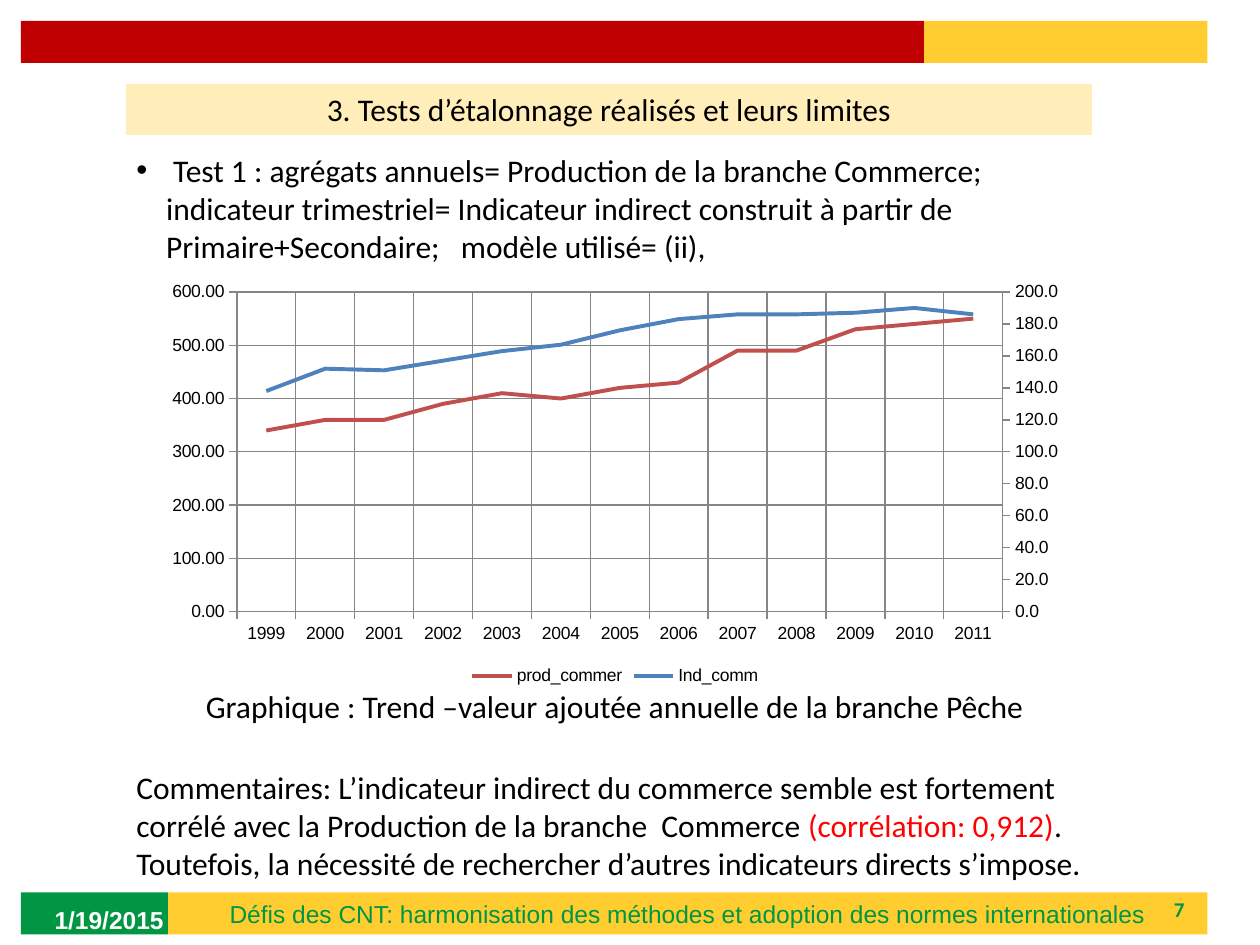
from copy import deepcopy

from lxml import etree
from pptx import Presentation
from pptx.chart.data import CategoryChartData
from pptx.dml.color import RGBColor
from pptx.enum.chart import XL_CHART_TYPE, XL_LEGEND_POSITION, XL_TICK_MARK
from pptx.enum.shapes import MSO_SHAPE
from pptx.enum.text import MSO_ANCHOR, MSO_AUTO_SIZE, PP_ALIGN
from pptx.oxml.ns import qn
from pptx.util import Cm, Pt

RECTANGLE = MSO_SHAPE.RECTANGLE
LINE_CHART = XL_CHART_TYPE.LINE
LEGEND_BOTTOM = XL_LEGEND_POSITION.BOTTOM
TICK_OUTSIDE = XL_TICK_MARK.OUTSIDE
TOP, MIDDLE = MSO_ANCHOR.TOP, MSO_ANCHOR.MIDDLE
NO_AUTOFIT = MSO_AUTO_SIZE.NONE
LEFT, CENTER, RIGHT = PP_ALIGN.LEFT, PP_ALIGN.CENTER, PP_ALIGN.RIGHT

BLACK = RGBColor(0x00, 0x00, 0x00)
WHITE = RGBColor(0xFF, 0xFF, 0xFF)
GREEN = RGBColor(0x00, 0x96, 0x44)
YELLOW = RGBColor(0xFF, 0xCD, 0x2F)
CREAM = RGBColor(0xFF, 0xEE, 0xB9)
DARK_RED = RGBColor(0xC0, 0x00, 0x00)
RED = RGBColor(0xFF, 0x00, 0x00)
GRID_GREY = RGBColor(0x86, 0x86, 0x86)
SERIES_COLORS = [RGBColor(0xC0, 0x50, 0x4D), RGBColor(0x4F, 0x81, 0xBD)]


def add_bar(left, top, width, height, color):
    bar = slide.shapes.add_shape(RECTANGLE, Cm(left), Cm(top), Cm(width), Cm(height))
    bar.shadow.inherit = False
    bar.fill.solid()
    bar.fill.fore_color.rgb = color
    bar.line.fill.background()
    return bar


def write(box, runs, size=18, font="Calibri", bold=False, align=LEFT, anchor=TOP):
    frame = box.text_frame
    frame.word_wrap = True
    frame.auto_size = NO_AUTOFIT
    frame.vertical_anchor = anchor
    para = frame.paragraphs[0]
    para.alignment = align
    for text, color in runs:
        span = para.add_run()
        span.text = text
        span.font.size = Pt(size)
        span.font.name = font
        span.font.bold = bold
        span.font.color.rgb = color
    return para


deck = Presentation()
deck.slide_width, deck.slide_height = Cm(25.4), Cm(19.05)
slide = deck.slides.add_slide(deck.slide_layouts[5])

# Header and footer bands
add_bar(0.42, 0.42, 18.21, 0.85, DARK_RED)
add_bar(18.63, 0.42, 5.71, 0.85, YELLOW)
add_bar(0.42, 17.99, 2.97, 0.85, GREEN)
footer = add_bar(3.39, 17.99, 20.95, 0.85, YELLOW)
footer_text = "Défis des CNT: harmonisation des méthodes et adoption des normes internationales"
write(footer, [(footer_text, GREEN)], 14, "Arial", align=CENTER, anchor=MIDDLE)

# Page number and date
page_box = slide.shapes.add_textbox(Cm(18.2), Cm(17.99), Cm(5.93), Cm(0.68))
write(page_box, [("7", GREEN)], 12, bold=True, align=RIGHT, anchor=MIDDLE)
date_box = slide.shapes.add_textbox(Cm(0.85), Cm(18.04), Cm(5.93), Cm(1.02))
write(date_box, [("1/19/2015", WHITE)], 14, "Arial", bold=True, anchor=MIDDLE)

# Title
title = slide.shapes.title
title.left, title.top, title.width, title.height = Cm(2.54), Cm(1.69), Cm(19.47), Cm(1.03)
title.fill.solid()
title.fill.fore_color.rgb = CREAM
write(title, [("3. Tests d’étalonnage réalisés et leurs limites", BLACK)], align=CENTER)

# Test description with a hanging bullet
test_box = add_bar(2.5, 2.92, 19.47, 2.57, WHITE)
test_text = (
    " Test 1 : agrégats annuels= Production de la branche Commerce; indicateur "
    "trimestriel= Indicateur indirect construit à partir de Primaire+Secondaire;   "
    "modèle utilisé= (ii),"
)
test_para = write(test_box, [(test_text, BLACK)])
properties = test_para._p.get_or_add_pPr()
properties.set("marL", str(Cm(0.6)))
properties.set("indent", str(-Cm(0.6)))
etree.SubElement(properties, qn("a:buFont")).set("typeface", "Arial")
etree.SubElement(properties, qn("a:buChar")).set("char", "•")

# Comments and chart caption
comment_box = add_bar(2.5, 15.36, 19.8, 2.57, WHITE)
write(comment_box, [
    ("Commentaires: L’indicateur indirect du commerce semble est fortement corrélé "
     "avec la Production de la branche  Commerce ", BLACK),
    ("(corrélation: 0,912)", RED),
    (". Toutefois, la nécessité de rechercher d’autres indicateurs directs s’impose.", BLACK),
])
caption_box = slide.shapes.add_textbox(Cm(3.9), Cm(13.72), Cm(17.4), Cm(1.03))
write(caption_box, [("Graphique : Trend –valeur ajoutée annuelle de la branche Pêche", BLACK)])

# Line chart
data = CategoryChartData()
data.categories = [str(year) for year in range(1999, 2012)]
data.add_series("prod_commer", [340, 360, 360, 390, 410, 400, 420, 430, 490, 490, 530, 540, 550])
data.add_series("Ind_comm", [138, 152, 151, 157, 163, 167, 176, 183, 186, 186, 187, 190, 186])
chart = slide.shapes.add_chart(
    LINE_CHART, Cm(3.1), Cm(5.52), Cm(18.6), Cm(8.41), data).chart
chart.has_title = False
chart.font.size = Pt(10)
chart.font.name = "Arial"
chart.font.color.rgb = BLACK
chart.has_legend = True
chart.legend.position = LEGEND_BOTTOM
chart.legend.include_in_layout = False
chart.plots[0].vary_by_categories = False
for series, color in zip(chart.plots[0].series, SERIES_COLORS):
    series.smooth = False
    series.format.line.width = Pt(2.25)
    series.format.line.color.rgb = color
for axis in (chart.category_axis, chart.value_axis):
    axis.major_tick_mark = TICK_OUTSIDE
    axis.has_major_gridlines = True
    for line in (axis.format.line, axis.major_gridlines.format.line):
        line.width = Pt(0.75)
        line.color.rgb = GRID_GREY
value_axis = chart.value_axis
value_axis.minimum_scale, value_axis.maximum_scale, value_axis.major_unit = 0, 600, 100
value_axis.tick_labels.number_format = "0.00"
value_axis.tick_labels.number_format_is_linked = False

# Second axis: the indicator moves to its own plot on the right
left_plot = chart.plots[0]._element
right_plot = deepcopy(left_plot)
left_plot.remove(left_plot.findall(qn("c:ser"))[1])
right_plot.remove(right_plot.findall(qn("c:ser"))[0])
left_plot.addnext(right_plot)
category_id, value_id = "50010", "50020"
for axis_id, new_id in zip(right_plot.findall(qn("c:axId")), (category_id, value_id)):
    axis_id.set("val", new_id)
left_value = value_axis._element
right_value = deepcopy(left_value)
hidden_category = deepcopy(chart.category_axis._element)
left_value.addnext(right_value)
right_value.addnext(hidden_category)
for axis, own_id, cross_id in ((right_value, value_id, category_id),
                               (hidden_category, category_id, value_id)):
    axis.find(qn("c:axId")).set("val", own_id)
    axis.find(qn("c:crossAx")).set("val", cross_id)
    axis.remove(axis.find(qn("c:majorGridlines")))
hidden_category.find(qn("c:delete")).set("val", "1")
for tag, value in (("c:axPos", "r"), ("c:crosses", "max"), ("c:majorUnit", "20")):
    right_value.find(qn(tag)).set("val", value)
right_value.find(qn("c:scaling")).find(qn("c:max")).set("val", "200")
right_value.find(qn("c:numFmt")).set("formatCode", "0.0")

deck.save("out.pptx")
